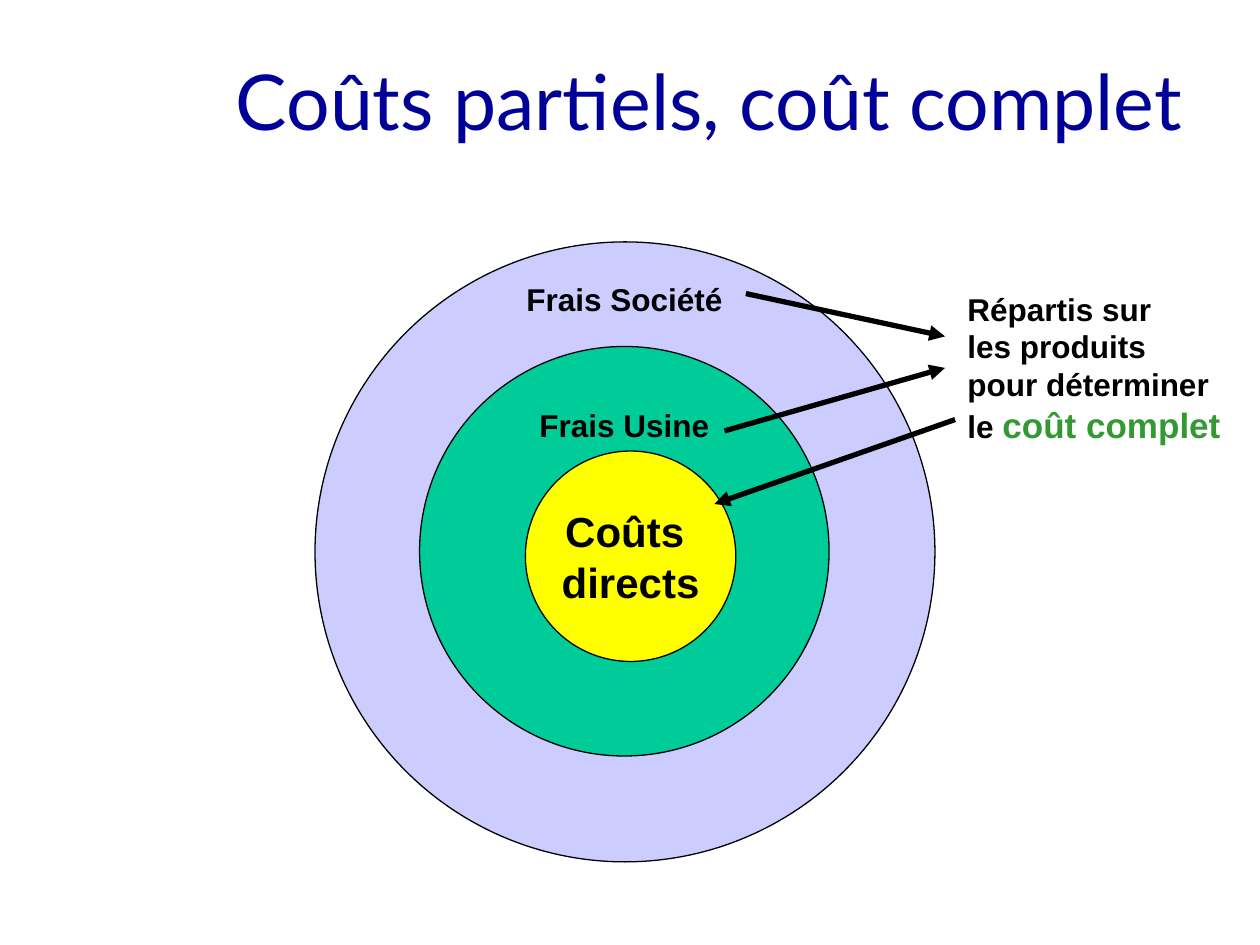
from lxml import etree
from pptx import Presentation
from pptx.dml.color import RGBColor
from pptx.enum import shapes, text
from pptx.oxml.ns import qn
from pptx.util import Inches, Pt

LABEL = {"name": "Arial", "size": Pt(18), "bold": True, "color": "000000"}
NAME = {**LABEL, "size": Pt(24)}
ACCENT = {**LABEL, "size": Pt(20), "color": "339933"}
TITLE = {"name": "Lato", "size": Pt(44), "color": "000099"}


def rgb(value):
    """Turn a hex string into a colour."""
    return RGBColor.from_string(value)


def set_attrs(obj, values):
    """Set each attribute named in a dict."""
    for key, value in values.items():
        if key == "color":
            obj.color.rgb = rgb(value)
        else:
            setattr(obj, key, value)


def write(tf, paragraphs, align, **frame):
    """Fill a text frame with paragraphs of (text, format) runs."""
    set_attrs(tf, frame)
    for i, runs in enumerate(paragraphs):
        p = tf.add_paragraph() if i else tf.paragraphs[0]
        p.alignment = align
        for content, fmt in runs:
            for j, line in enumerate(content.split("\v")):
                if j:
                    p.add_line_break()
                r = p.add_run()
                r.text = line
                set_attrs(r.font, fmt)


def add_title(slide, content):
    """Place and fill the title placeholder."""
    sp = slide.shapes.title
    set_attrs(sp, {"left": Inches(0.25), "top": Inches(0.17),
                   "width": Inches(9.24), "height": Inches(1.25)})
    write(sp.text_frame, [[(content, TITLE)]], text.PP_ALIGN.RIGHT,
          vertical_anchor=text.MSO_ANCHOR.MIDDLE)


def add_circle(slide, left, top, size, fill):
    """Draw an outlined circle and return it."""
    sp = slide.shapes.add_shape(shapes.MSO_SHAPE.OVAL, Inches(left), Inches(top),
                                Inches(size), Inches(size))
    sp.shadow.inherit = False
    sp.fill.solid()
    sp.fill.fore_color.rgb = rgb(fill)
    set_attrs(sp.line, {"color": "000000", "width": Pt(0.75)})
    return sp


def add_label(slide, box, paragraphs):
    """Add a left-aligned text box that does not wrap."""
    sp = slide.shapes.add_textbox(*map(Inches, box))
    write(sp.text_frame, paragraphs, text.PP_ALIGN.LEFT, word_wrap=False,
          auto_size=text.MSO_AUTO_SIZE.SHAPE_TO_FIT_TEXT)


def add_arrow(slide, *ends):
    """Draw a thick line with an arrowhead at its end."""
    sp = slide.shapes.add_connector(shapes.MSO_CONNECTOR.STRAIGHT, *map(Inches, ends))
    set_attrs(sp.line, {"color": "000000", "width": Pt(3)})
    ln = sp.line._get_or_add_ln()
    etree.SubElement(ln, qn("a:tailEnd"), type="triangle")
    etree.SubElement(sp._element.spPr, qn("a:effectLst"))


def main():
    """Build the slide and save it."""
    prs = Presentation()
    set_attrs(prs, {"slide_width": Inches(10), "slide_height": Inches(7.5)})
    slide = prs.slides.add_slide(prs.slide_layouts[5])
    add_title(slide, "Coûts partiels, coût complet")

    add_circle(slide, 2.5, 1.92, 4.92, "CCCCFF")
    factory = add_circle(slide, 3.33, 2.75, 3.25, "00CC99")
    write(factory.text_frame, [[("Frais Usine", LABEL)]], text.PP_ALIGN.CENTER,
          vertical_anchor=text.MSO_ANCHOR.TOP, margin_top=0, word_wrap=False)
    direct = add_circle(slide, 4.17, 3.58, 1.67, "FFFF00")
    write(direct.text_frame, [[("Coûts \vdirects", NAME)]], text.PP_ALIGN.CENTER,
          vertical_anchor=text.MSO_ANCHOR.MIDDLE, word_wrap=False)

    add_label(slide, (4.08, 2.17, 1.76, 0.4), [[("Frais Société", LABEL)]])
    add_label(slide, (7.58, 2.25, 2.21, 1.34), [
        [("Répartis sur", LABEL)],
        [("les produits", LABEL)],
        [("pour déterminer", LABEL)],
        [("le ", LABEL), ("coût complet", ACCENT)],
    ])

    add_arrow(slide, 5.92, 2.33, 7.5, 2.67)
    add_arrow(slide, 5.75, 3.42, 7.5, 2.92)
    add_arrow(slide, 7.58, 3.33, 5.67, 4)
    prs.save("out.pptx")


if __name__ == "__main__":
    main()
